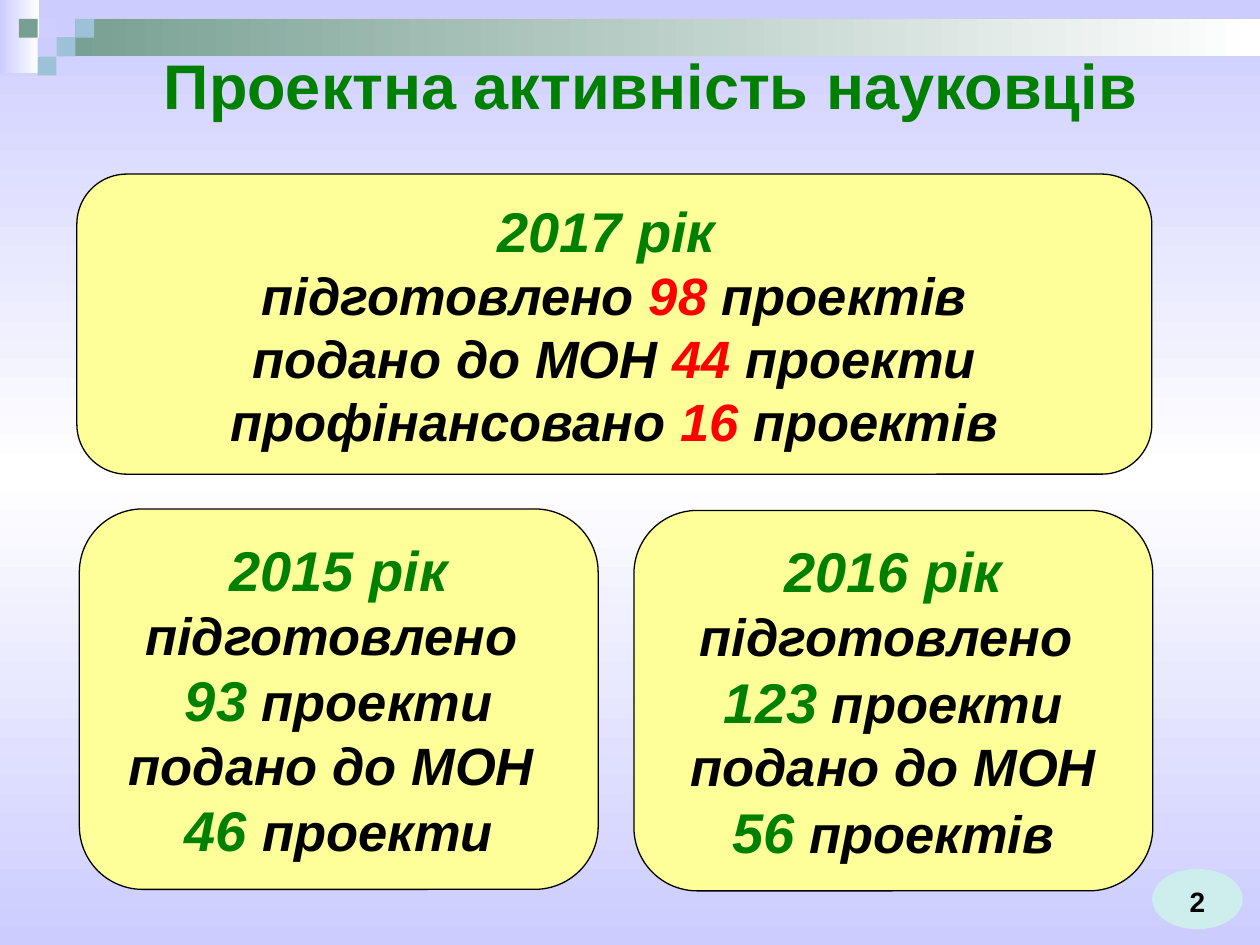
from copy import deepcopy

from pptx import Presentation
from pptx.dml.color import RGBColor
from pptx.enum.shapes import MSO_SHAPE
from pptx.enum.text import MSO_ANCHOR, PP_ALIGN
from pptx.oxml.ns import qn
from pptx.util import Cm, Pt

RECTANGLE = MSO_SHAPE.RECTANGLE
ROUNDED = MSO_SHAPE.ROUNDED_RECTANGLE
OVAL = MSO_SHAPE.OVAL
CENTER = PP_ALIGN.CENTER
TOP, MIDDLE = MSO_ANCHOR.TOP, MSO_ANCHOR.MIDDLE

FONT = "Arial"
TITLE_ONLY = 5
LAVENDER, WHITE, BLACK = "CCCCFF", "FFFFFF", "000000"
SAGE, SKY, MINT, CREAM = "779F92", "9DC2D7", "CEEEEE", "FFFF99"
GREEN, RED = "008000", "FF0000"

YEAR = (32, GREEN)
COUNT = (32, GREEN)
LABEL = (30, BLACK)
HIGHLIGHT = (30, RED)


def color(value):
    return RGBColor.from_string(value)


def paint_gradient(fill, owner, colors, angle):
    fill.gradient()
    fill.gradient_angle = angle
    stop_list = next(owner.iter(qn("a:gsLst")))
    while len(stop_list) < len(colors):
        stop_list.append(deepcopy(stop_list[0]))
    for index, (stop, value) in enumerate(zip(fill.gradient_stops, colors)):
        stop.color.rgb = color(value)
        stop.position = index / (len(colors) - 1)


def add_box(page, kind, box, fill=None, line=None):
    shape = page.shapes.add_shape(kind, *(Cm(length) for length in box))
    shape.shadow.inherit = False
    if fill:
        shape.fill.solid()
        shape.fill.fore_color.rgb = color(fill)
    if line:
        shape.line.color.rgb = color(line)
        shape.line.width = Pt(0.75)
    else:
        shape.line.fill.background()
    return shape


def format_span(span, size, value, italic=False):
    span.font.name = FONT
    span.font.size = Pt(size)
    span.font.bold = True
    span.font.italic = italic
    span.font.color.rgb = color(value)


def add_corner_band(page, box):
    left, top, width, tile = box
    corner = add_box(page, RECTANGLE, (left, top, 0.79, 1.47))
    paint_gradient(corner.fill, corner._element, [LAVENDER, WHITE], 0)
    band_left = left + 3 * tile
    band = add_box(page, RECTANGLE,
                   (band_left, top + tile, width - 3 * tile, 2 * tile))
    paint_gradient(band.fill, band._element, [SAGE, WHITE], 0)
    tiles = [(3, 1, LAVENDER), (4, 0, LAVENDER), (4, 1, SKY), (2, 2, LAVENDER),
             (1, 1, SAGE), (3, 2, SKY), (2, 3, SKY)]
    for column, row, fill in tiles:
        add_box(page, RECTANGLE,
                (left + column * tile, top + row * tile, tile, tile), fill)


def add_title(page, box, text):
    title = page.shapes.title
    title.left, title.top, title.width, title.height = map(Cm, box)
    frame = title.text_frame
    frame.text = text
    frame.word_wrap = True
    frame.vertical_anchor = MIDDLE
    para = frame.paragraphs[0]
    para.alignment = CENTER
    format_span(para.runs[0], 36, GREEN)


def add_year_card(page, box, lines):
    frame = add_box(page, ROUNDED, box, CREAM, BLACK).text_frame
    frame.word_wrap = True
    frame.vertical_anchor = MIDDLE
    for index, line in enumerate(lines):
        para = frame.add_paragraph() if index else frame.paragraphs[0]
        para.alignment = CENTER
        for text, (size, value) in line:
            span = para.add_run()
            span.text = text
            format_span(span, size, value, italic=True)


def add_page_number(page, box, text):
    frame = add_box(page, OVAL, box, MINT, MINT).text_frame
    frame.text = text
    frame.vertical_anchor = TOP
    para = frame.paragraphs[0]
    para.alignment = CENTER
    format_span(para.runs[0], 16, BLACK)


def main():
    deck = Presentation()
    deck.slide_width, deck.slide_height = Cm(25.4), Cm(19.05)
    page = deck.slides.add_slide(deck.slide_layouts[TITLE_ONLY])
    paint_gradient(page.background.fill, page._element,
                   [LAVENDER, WHITE, LAVENDER], 270)

    add_corner_band(page, (0, 0, 25.4, 0.38))
    add_title(page, (1.55, 0.79, 23.14, 1.8), "Проектна активність науковців")
    add_year_card(page, (1.6, 10.26, 10.46, 7.67), [
        [("2015 рік ", YEAR), ("підготовлено ", LABEL)],
        [("93", COUNT), (" проекти", LABEL)],
        [("подано до МОН ", LABEL)],
        [("46 ", COUNT), ("проекти", LABEL)],
    ])
    add_year_card(page, (12.78, 10.29, 10.46, 7.67), [
        [("2016 рік ", YEAR), ("підготовлено ", LABEL)],
        [("123", COUNT), (" проекти", LABEL)],
        [("подано до МОН", LABEL)],
        [("56", COUNT), (" проектів", LABEL)],
    ])
    add_year_card(page, (1.55, 3.51, 21.67, 6.05), [
        [("2017 рік ", YEAR)],
        [("підготовлено ", LABEL), ("98", HIGHLIGHT), (" проектів", LABEL)],
        [("подано до МОН ", LABEL), ("44", HIGHLIGHT), (" проекти", LABEL)],
        [("профінансовано ", LABEL), ("16", HIGHLIGHT), (" проектів", LABEL)],
    ])
    add_page_number(page, (23.24, 17.53, 1.8, 1.19), "2")
    deck.save("out.pptx")


if __name__ == "__main__":
    main()
